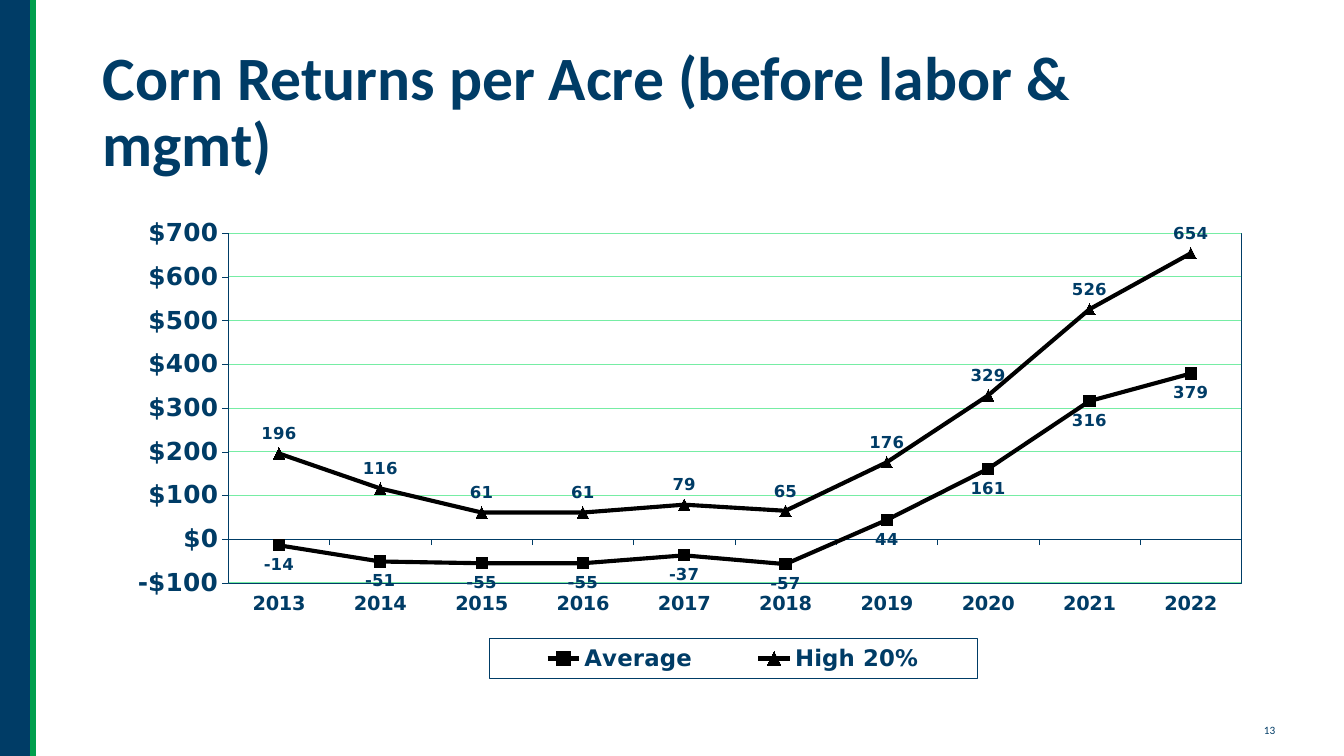
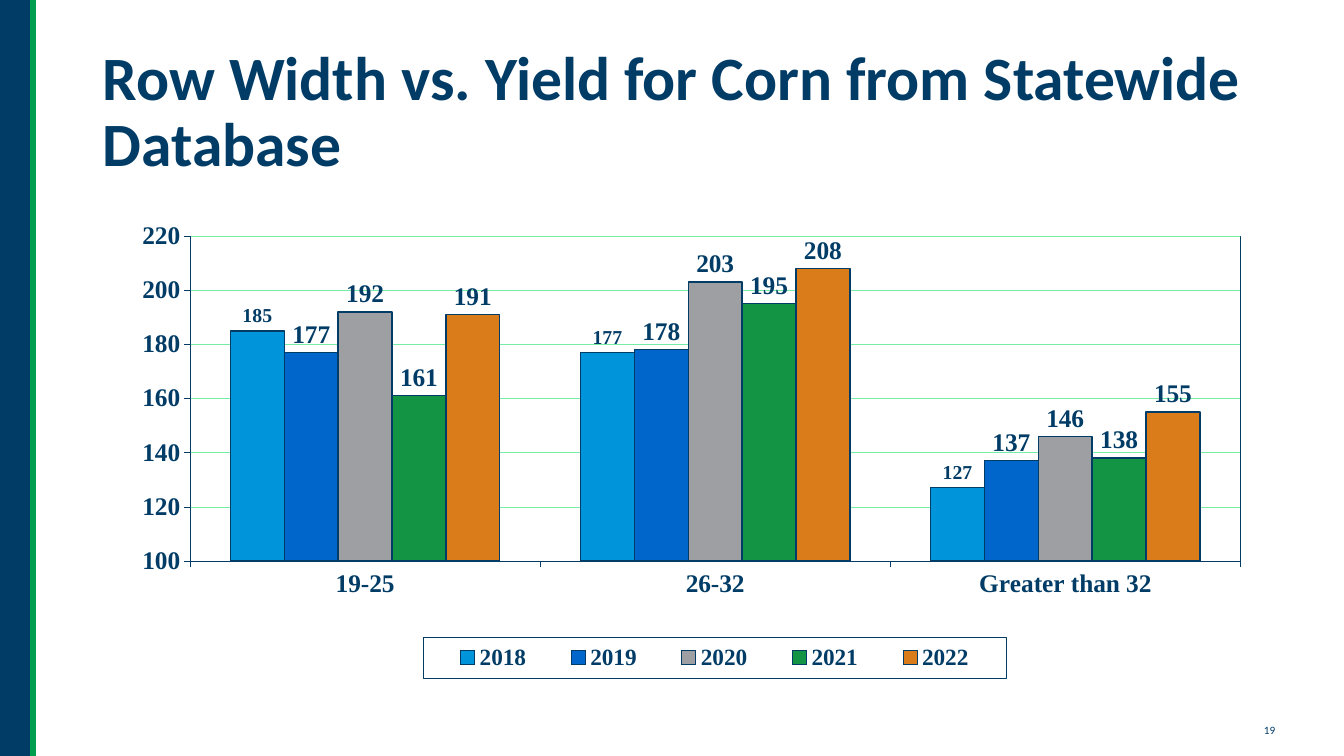
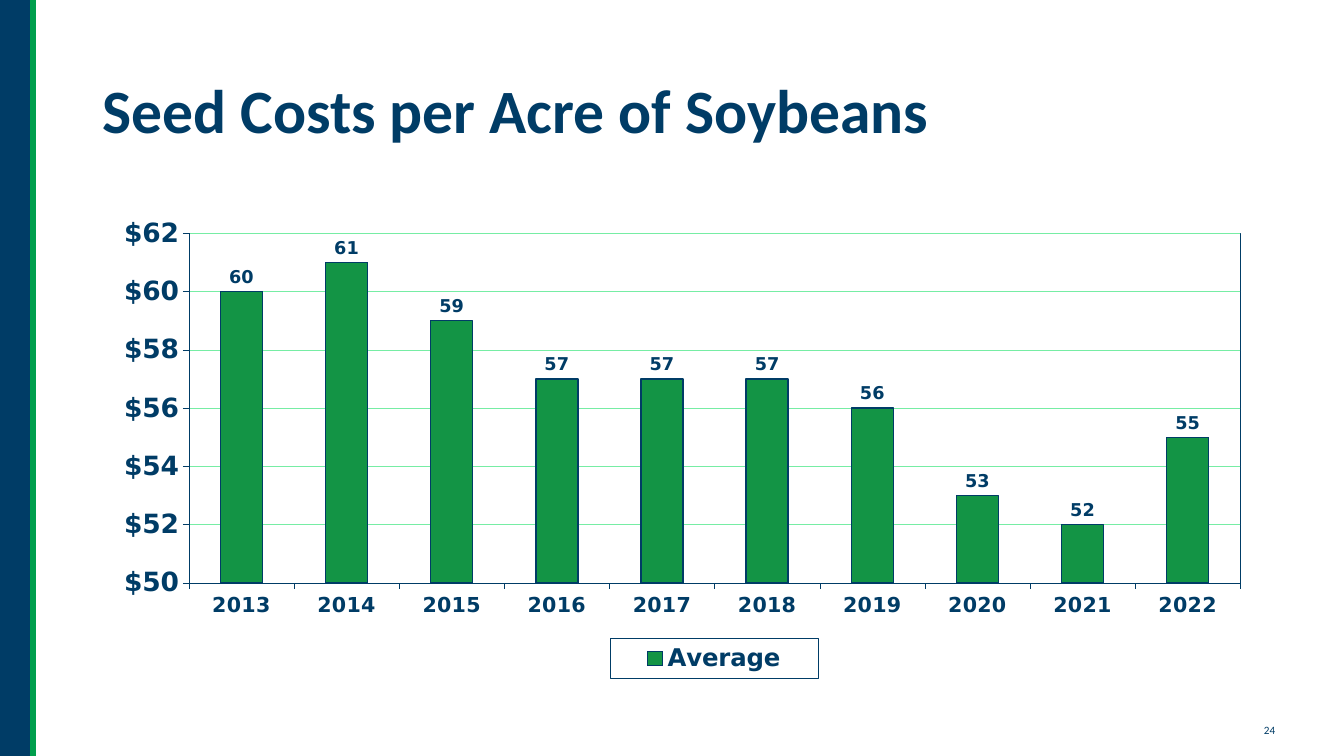
from pptx import Presentation
from pptx.chart.data import CategoryChartData
from pptx.dml.color import RGBColor
from pptx.enum.chart import (XL_CHART_TYPE, XL_LABEL_POSITION, XL_LEGEND_POSITION,
                             XL_MARKER_STYLE, XL_TICK_LABEL_POSITION, XL_TICK_MARK)
from pptx.enum.shapes import MSO_CONNECTOR, MSO_SHAPE
from pptx.enum.text import MSO_ANCHOR
from pptx.oxml import parse_xml
from pptx.oxml.ns import nsdecls
from pptx.util import Pt

NAVY = RGBColor(0x00, 0x3C, 0x66)
GREEN = RGBColor(0x00, 0x9F, 0x4D)
GRID = RGBColor(0x76, 0xED, 0xA4)
BLACK = RGBColor(0x00, 0x00, 0x00)
SKY = RGBColor(0x00, 0x95, 0xDA)
BLUE = RGBColor(0x00, 0x66, 0xCC)
GRAY = RGBColor(0x9D, 0x9F, 0xA2)
LEAF = RGBColor(0x13, 0x94, 0x45)
ORANGE = RGBColor(0xDB, 0x7C, 0x1B)

WIDTH, HEIGHT = 960, 540
BAND_BOX = (0, 0, 23.76, HEIGHT)
TITLE_BOX = (66.24, 28.8, 828, 104.4)
CHART_BOX = (66.24, 144, 828, 342.72)
NUMBER_BOX = (895.68, 513.36, 24.48, 17.28)

SANS = "DejaVu Sans"
SERIF = "Times New Roman"
DOLLARS = '"$"#,##0'
YEARS = [str(year) for year in range(2013, 2023)]


def add_band(s, box):
    x, y, w, h = box
    band = s.shapes.add_shape(MSO_SHAPE.RECTANGLE, *map(Pt, box))
    band.shadow.inherit = False
    band.fill.solid()
    band.fill.fore_color.rgb = NAVY
    band.line.fill.background()
    edge = s.shapes.add_connector(MSO_CONNECTOR.STRAIGHT, Pt(x + w), Pt(y), Pt(x + w), Pt(y + h))
    edge.line.color.rgb = GREEN
    edge.line.width = Pt(4.5)
    edge._element.spPr.append(parse_xml(f"<a:effectLst {nsdecls('a')}/>"))


def add_text(s, box, text, size, bold=False, wrap=True, anchor=MSO_ANCHOR.TOP, spacing=1.0):
    tf = s.shapes.add_textbox(*map(Pt, box)).text_frame
    tf.word_wrap = wrap
    tf.vertical_anchor = anchor
    p = tf.paragraphs[0]
    p.line_spacing = spacing
    r = p.add_run()
    r.text = text
    set_font(r.font, size, "Calibri", bold)


def set_font(font, size, name, bold=True):
    font.size = Pt(size)
    font.name = name
    font.bold = bold
    font.color.rgb = NAVY


def manual_layout(box, inner=False):
    target = '<c:layoutTarget val="inner"/>' if inner else ""
    modes = "".join(f'<c:{key}Mode val="edge"/>' for key in "xy")
    sizes = "".join(f'<c:{key} val="{value}"/>' for key, value in zip("xywh", box))
    return parse_xml(f"<c:layout {nsdecls('c')}><c:manualLayout>{target}{modes}{sizes}"
                     "</c:manualLayout></c:layout>")


def outline():
    return parse_xml(f"<c:spPr {nsdecls('c', 'a')}><a:noFill/><a:ln w=\"{Pt(0.25)}\"><a:solidFill>"
                     f'<a:srgbClr val="{NAVY}"/></a:solidFill></a:ln></c:spPr>')


def frame_plot(chart, box):
    plot_area = chart._chartSpace.chart.plotArea
    for layout in plot_area.xpath("c:layout"):
        plot_area.remove(layout)
    plot_area.insert(0, manual_layout(box, inner=True))
    plot_area.append(outline())


def frame_legend(chart, box, size, font):
    chart.has_legend = True
    legend = chart.legend
    legend.position = XL_LEGEND_POSITION.BOTTOM
    legend.include_in_layout = False
    overlay = legend._element.xpath("c:overlay")[0]
    overlay.addprevious(manual_layout(box))
    overlay.addnext(outline())
    set_font(legend.font, size, font)


def style_axes(chart, font, cat_size, val_size, scale, number_format, grid_width):
    for axis, size in ((chart.category_axis, cat_size), (chart.value_axis, val_size)):
        axis.major_tick_mark = XL_TICK_MARK.OUTSIDE
        axis.minor_tick_mark = XL_TICK_MARK.NONE
        axis.format.line.color.rgb = NAVY
        axis.format.line.width = Pt(0.25)
        set_font(axis.tick_labels.font, size, font)
    chart.category_axis.has_major_gridlines = False
    chart.category_axis.tick_label_position = XL_TICK_LABEL_POSITION.LOW
    values = chart.value_axis
    values.minimum_scale, values.maximum_scale, values.major_unit = scale
    values.tick_labels.number_format = number_format
    values.tick_labels.number_format_is_linked = False
    values.has_major_gridlines = True
    values.major_gridlines.format.line.color.rgb = GRID
    values.major_gridlines.format.line.width = Pt(grid_width)


def label_series(series, size, font, position):
    labels = series.data_labels
    labels.show_value = True
    labels.number_format = "0"
    labels.number_format_is_linked = False
    labels.position = position
    set_font(labels.font, size, font)


def add_chart(s, box, kind, cats, series, font, cat_size, val_size, legend_size,
              scale, plot_box, legend_box, number_format="General", grid_width=0.25):
    data = CategoryChartData()
    data.categories = cats
    for name, values in series:
        data.add_series(name, values)
    chart = s.shapes.add_chart(kind, *map(Pt, box), data).chart
    chart.has_title = False
    set_font(chart.font, val_size, font)
    style_axes(chart, font, cat_size, val_size, scale, number_format, grid_width)
    frame_plot(chart, plot_box)
    frame_legend(chart, legend_box, legend_size, font)
    chart.plots[0].vary_by_categories = False
    return chart


def style_lines(chart, looks, label_size, font):
    for series, (marker, position) in zip(chart.plots[0].series, looks):
        series.smooth = False
        series.format.line.color.rgb = BLACK
        series.format.line.width = Pt(2.96)
        series.marker.style = marker
        series.marker.size = 8
        series.marker.format.fill.solid()
        series.marker.format.fill.fore_color.rgb = BLACK
        series.marker.format.line.color.rgb = BLACK
        label_series(series, label_size, font, position)


def style_columns(chart, looks, font):
    chart.plots[0].gap_width = 150
    chart.plots[0].overlap = 0
    for series, (color, label_size) in zip(chart.plots[0].series, looks):
        series.invert_if_negative = False
        series.format.fill.solid()
        series.format.fill.fore_color.rgb = color
        series.format.line.color.rgb = NAVY
        series.format.line.width = Pt(1)
        label_series(series, label_size, font, XL_LABEL_POSITION.OUTSIDE_END)


def add_slide(prs, title, number):
    s = prs.slides.add_slide(prs.slide_layouts[6])
    add_band(s, BAND_BOX)
    add_text(s, TITLE_BOX, title, 44, bold=True, anchor=MSO_ANCHOR.MIDDLE, spacing=0.9)
    add_text(s, NUMBER_BOX, str(number), 8, wrap=False)
    return s


def corn_returns(prs):
    s = add_slide(prs, "Corn Returns per Acre (before labor & mgmt)", 13)
    series = [("Average", (-14, -51, -55, -55, -37, -57, 44, 161, 316, 379)),
              ("High 20%", (196, 116, 61, 61, 79, 65, 176, 329, 526, 654))]
    chart = add_chart(s, CHART_BOX, XL_CHART_TYPE.LINE_MARKERS, YEARS, series, SANS,
                      13.8, 17.7, 16.3, (-100, 700, 100), (0.117, 0.066, 0.874, 0.729),
                      (0.342, 0.911, 0.421, 0.083), DOLLARS, 0.75)
    looks = [(XL_MARKER_STYLE.SQUARE, XL_LABEL_POSITION.BELOW),
             (XL_MARKER_STYLE.TRIANGLE, XL_LABEL_POSITION.ABOVE)]
    style_lines(chart, looks, 11.8, SANS)


def row_width(prs):
    s = add_slide(prs, "Row Width vs. Yield for Corn from Statewide Database", 19)
    series = [("2018", (185, 177, 127)), ("2019", (177, 178, 137)), ("2020", (192, 203, 146)),
              ("2021", (161, 195, 138)), ("2022", (191, 208, 155))]
    chart = add_chart(s, CHART_BOX, XL_CHART_TYPE.COLUMN_CLUSTERED,
                      ["19-25", "26-32", "Greater than 32"], series, SERIF,
                      18.1, 18.1, 16.6, (100, 220, 20), (0.084, 0.072, 0.906, 0.677),
                      (0.285, 0.907, 0.503, 0.087))
    looks = [(SKY, 14.1)] + [(color, 18.1) for color in (BLUE, GRAY, LEAF, ORANGE)]
    style_columns(chart, looks, SERIF)


def seed_costs(prs):
    s = add_slide(prs, "Seed Costs per Acre of Soybeans", 24)
    series = [("Average", (60, 61, 59, 57, 57, 57, 56, 53, 52, 55))]
    chart = add_chart(s, CHART_BOX, XL_CHART_TYPE.COLUMN_CLUSTERED, YEARS, series, SANS,
                      14.7, 18.9, 17.4, (50, 62, 2), (0.083, 0.066, 0.907, 0.729),
                      (0.446, 0.911, 0.18, 0.083), DOLLARS)
    style_columns(chart, [(LEAF, 12.6)], SANS)


def main():
    prs = Presentation()
    prs.slide_width, prs.slide_height = Pt(WIDTH), Pt(HEIGHT)
    corn_returns(prs)
    row_width(prs)
    seed_costs(prs)
    prs.save("out.pptx")


if __name__ == "__main__":
    main()
